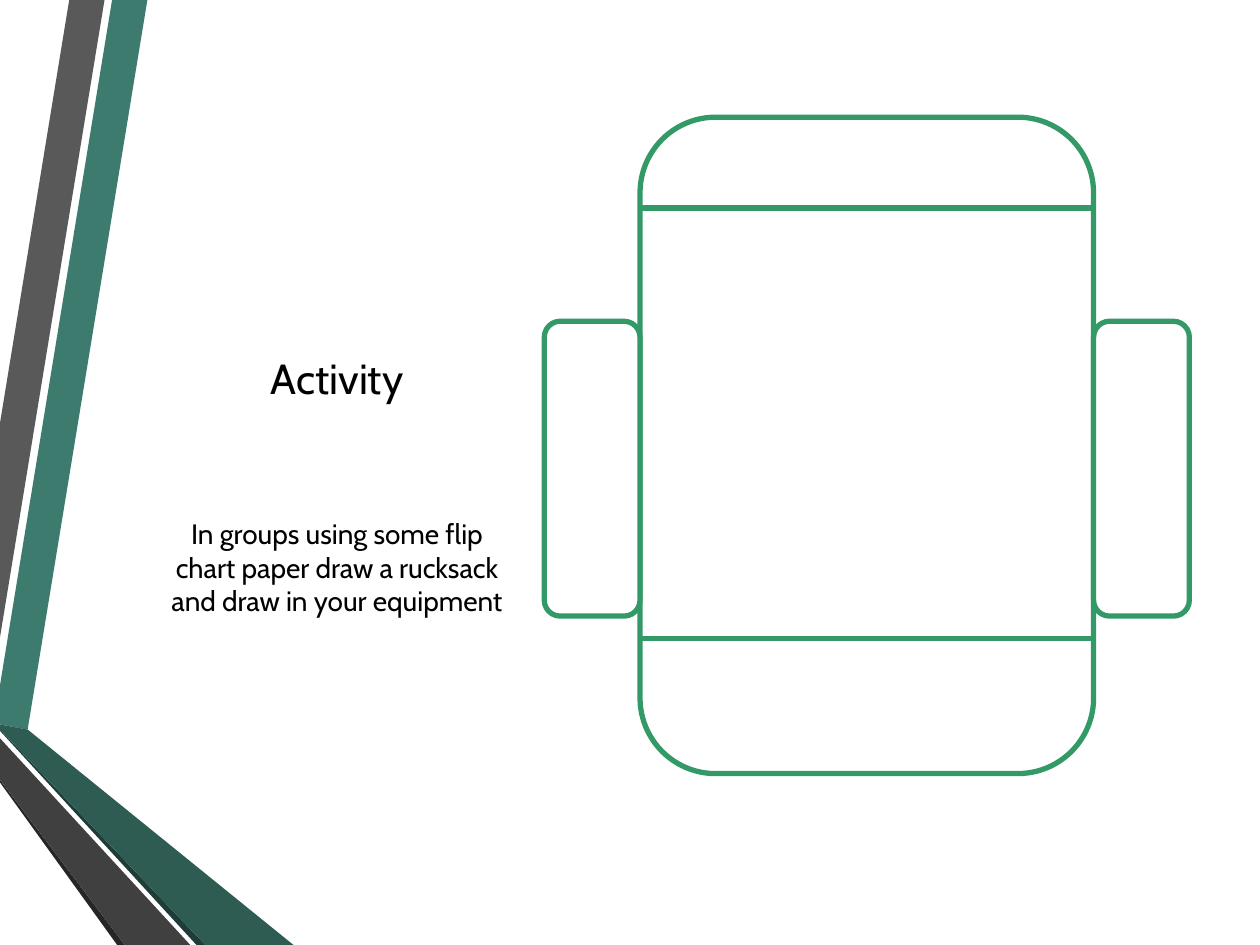
from lxml import etree
from pptx import Presentation
from pptx.dml.color import RGBColor
from pptx.enum import shapes, text
from pptx.oxml import ns
from pptx.util import Inches, Pt

COLORS = {
    "teal": "3D7B6F", "teal_dark": "2E5C53", "teal_edge": "1F3D38",
    "gray": "595959", "gray_dark": "404040", "gray_edge": "262626",
    "outline": "339966", "paper": "FFFFFF", "ink": "000000",
}
RIBBONS = [
    ("teal", [(0, 5.44), (0, 5.75), (0.22, 5.79), (1.17, 0), (0.89, 0)]),
    ("gray", [(0.83, 0), (0.55, 0), (0, 3.36), (0, 5.06)]),
    ("gray_edge", [(0, 6.19), (0, 6.21), (0.93, 7.5), (0.99, 7.5)]),
    ("teal_edge", [(0, 5.79), (0, 5.8), (1.56, 7.5), (1.63, 7.5)]),
    ("teal_dark", [(0, 5.79), (1.63, 7.5), (2.33, 7.5), (0.22, 5.79), (0, 5.75)]),
    ("gray_dark", [(0, 6.19), (0.99, 7.5), (1.51, 7.5), (0, 5.86)]),
]
BAG_LEFT, BAG_TOP, BAG_WIDTH, BAG_HEIGHT = 5.08, 0.93, 3.6, 5.21
BAG_RIGHT = BAG_LEFT + BAG_WIDTH
POCKET_TOP, POCKET_WIDTH, POCKET_HEIGHT = 2.55, 0.76, 2.34
SEAMS = (5.07, 1.65)


def rgb(name):
    return RGBColor.from_string(COLORS[name])


def add_ribbon(slide, color, points):
    builder = slide.shapes.build_freeform(
        Inches(points[0][0]), Inches(points[0][1]), scale=1.0)
    builder.add_line_segments([(Inches(x), Inches(y)) for x, y in points[1:]])
    ribbon = builder.convert_to_shape()
    ribbon.shadow.inherit = False
    ribbon.fill.solid()
    ribbon.fill.fore_color.rgb = rgb(color)
    ribbon.line.fill.background()


def add_text(slide, top, height, words, size, anchor):
    box = slide.shapes.add_textbox(
        Inches(1.22), Inches(top), Inches(2.91), Inches(height))
    frame = box.text_frame
    frame.word_wrap = True
    frame.vertical_anchor = anchor
    frame.text = words
    paragraph = frame.paragraphs[0]
    paragraph.alignment = text.PP_ALIGN.CENTER
    font = paragraph.runs[0].font
    font.name, font.size = "Cabin", Pt(size)
    font.color.rgb = rgb("ink")


def draw_outline(line):
    line.color.rgb = rgb("outline")
    line.width = Pt(3)


def add_panel(slide, left, top, width, height):
    panel = slide.shapes.add_shape(
        shapes.MSO_SHAPE.ROUNDED_RECTANGLE,
        Inches(left), Inches(top), Inches(width), Inches(height))
    panel.shadow.inherit = False
    panel.fill.solid()
    panel.fill.fore_color.rgb = rgb("paper")
    draw_outline(panel.line)


def add_seam(slide, y):
    seam = slide.shapes.add_connector(
        shapes.MSO_CONNECTOR.STRAIGHT,
        Inches(BAG_LEFT), Inches(y), Inches(BAG_RIGHT), Inches(y))
    draw_outline(seam.line)
    etree.SubElement(seam._element.spPr, ns.qn("a:effectLst"))


def main():
    prs = Presentation()
    prs.slide_width, prs.slide_height = Inches(10), Inches(7.5)
    slide = prs.slides.add_slide(prs.slide_layouts[6])

    for color, points in RIBBONS:
        add_ribbon(slide, color, points)

    add_text(slide, 1.75, 1.5, "Activity", 24, text.MSO_ANCHOR.BOTTOM)
    add_text(slide, 3.25, 2.5,
             "In groups using some flip chart paper draw a rucksack "
             "and draw in your equipment", 16, text.MSO_ANCHOR.MIDDLE)

    add_panel(slide, BAG_LEFT, BAG_TOP, BAG_WIDTH, BAG_HEIGHT)
    for pocket_left in (BAG_RIGHT, BAG_LEFT - POCKET_WIDTH):
        add_panel(slide, pocket_left, POCKET_TOP, POCKET_WIDTH, POCKET_HEIGHT)
    for y in SEAMS:
        add_seam(slide, y)

    prs.save("out.pptx")


if __name__ == "__main__":
    main()
